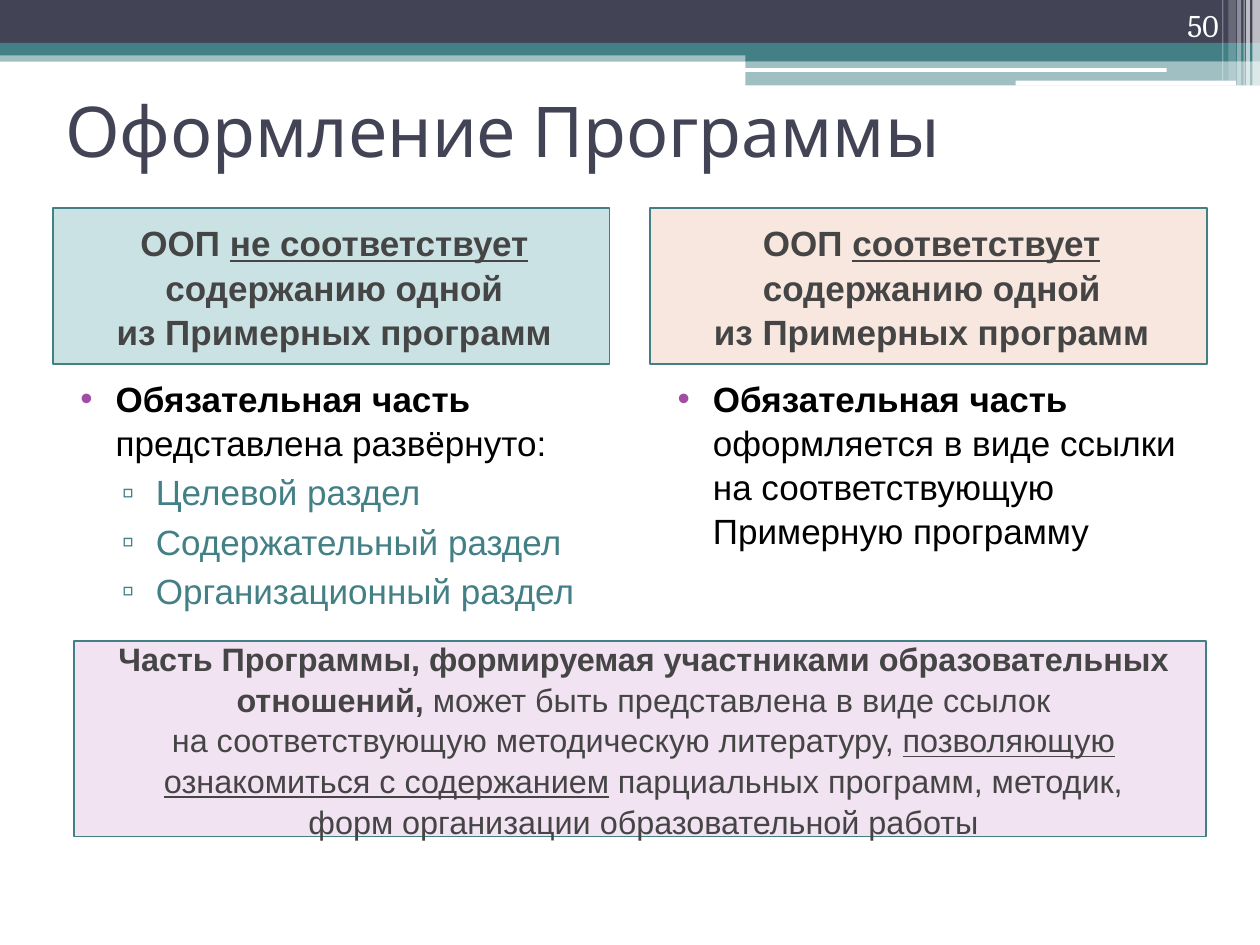
from typing import NamedTuple

from lxml import etree
from pptx import Presentation
from pptx.dml.color import RGBColor
from pptx.enum.shapes import MSO_SHAPE
from pptx.enum.text import MSO_ANCHOR, PP_ALIGN
from pptx.oxml.ns import qn
from pptx.util import Pt

RECT, ROUNDED = MSO_SHAPE.RECTANGLE, MSO_SHAPE.ROUNDED_RECTANGLE
LEFT, CENTER, RIGHT = PP_ALIGN.LEFT, PP_ALIGN.CENTER, PP_ALIGN.RIGHT
TOP, MIDDLE, BOTTOM = MSO_ANCHOR.TOP, MSO_ANCHOR.MIDDLE, MSO_ANCHOR.BOTTOM

TEAL, NAVY, WHITE, BLACK = "438086", "424456", "FFFFFF", "000000"
PURPLE, GRAY = "A04DA3", "454545"
LINE_SPACING = 1.05
COLUMN_WIDTH = 318.2
LEFT_COLUMN, RIGHT_COLUMN = 30.2, 371.5


class Box(NamedTuple):
    x: float
    y: float
    width: float
    height: float


class Strip(NamedTuple):
    box: Box
    color: str
    opacity: int = 100
    preset: int = RECT


class Span(NamedTuple):
    text: str
    bold: bool = False
    underline: bool = False


class Style(NamedTuple):
    size: float
    color: str
    font: str = "Arial"
    align: int = LEFT
    margin: float = 0
    indent: float = 0
    bullet: str = ""
    bullet_color: str = ""
    line_spacing: float = LINE_SPACING


class Paragraph(NamedTuple):
    spans: list[Span]
    style: Style


class Column(NamedTuple):
    x: float
    tint: str
    heading: list[Span]
    points: list[Paragraph]


ITEM = Style(20, BLACK, margin=28.8, indent=-20.2, bullet="•", bullet_color=PURPLE)
SUBITEM = Style(20, TEAL, margin=51.8, indent=-19.4, bullet="▫", bullet_color=TEAL)
HEADING = Style(20, GRAY, align=CENTER, margin=3.6)
SUMMARY = HEADING._replace(size=18.5)
TITLE = Style(40, NAVY, "Cabin", line_spacing=1)
NUMBER = Style(18, WHITE, "Cambria", RIGHT, line_spacing=1)

STRIPS = [
    Strip(Box(0, 28.8, 720, 6.5), TEAL, 50),
    Strip(Box(0, 0, 720, 24.5), NAVY),
    Strip(Box(0, 24.5, 720, 7.2), TEAL),
    Strip(Box(426, 28.1, 294, 7), TEAL),
    Strip(Box(426, 35, 294, 13.8), TEAL, 50),
    Strip(Box(425.5, 38.9, 241.2, 2.2), WHITE, preset=ROUNDED),
    Strip(Box(580.3, 46.1, 126, 2.9), WHITE, preset=ROUNDED),
    Strip(Box(715.7, 0, 4.3, 49), WHITE, 65),
    Strip(Box(712.1, 0, 2.2, 49), WHITE, 65),
    Strip(Box(710.6, 0, 0.7, 49), WHITE, 60),
    Strip(Box(707, 0, 2.2, 49), WHITE, 40),
    Strip(Box(702, 0, 4.3, 46.1), WHITE, 20),
    Strip(Box(698.4, 0, 0.7, 46.1), WHITE, 30),
]

COLUMNS = [
    Column(
        LEFT_COLUMN, "328E97",
        [Span("ООП ", True), Span("не соответствует ", True, True),
         Span("содержанию одной\nиз Примерных программ", True)],
        [Paragraph([Span("Обязательная часть ", True),
                    Span("представлена развёрнуто:")], ITEM)]
        + [Paragraph([Span(f"{section} раздел")], SUBITEM)
           for section in ("Целевой", "Содержательный", "Организационный")],
    ),
    Column(
        RIGHT_COLUMN, "E1A17C",
        [Span("ООП ", True), Span("соответствует\n", True, True),
         Span("содержанию одной\nиз Примерных программ", True)],
        [Paragraph([Span("Обязательная часть ", True),
                    Span("оформляется в виде ссылки на соответствующую "
                         "Примерную программу")], ITEM)],
    ),
]

SUMMARY_SPANS = [
    Span("Часть Программы, формируемая участниками образовательных отношений, ", True),
    Span("может быть представлена в виде ссылок\n"
         "на соответствующую методическую литературу, "),
    Span("позволяющую ознакомиться с содержанием", underline=True),
    Span(" парциальных программ, методик,\nформ организации образовательной работы"),
]


def rgb(value: str) -> RGBColor:
    return RGBColor.from_string(value)


def points(box: Box) -> list[Pt]:
    return [Pt(length) for length in box]


def add_panel(slide, strip: Strip, outline: str = ""):
    panel = slide.shapes.add_shape(strip.preset, *points(strip.box))
    panel.shadow.inherit = False
    panel.fill.solid()
    panel.fill.fore_color.rgb = rgb(strip.color)
    if strip.opacity < 100:
        color = panel.fill._xPr.find(f".//{qn('a:srgbClr')}")
        etree.SubElement(color, qn("a:alpha"), val=str(strip.opacity * 1000))
    if outline:
        panel.line.color.rgb = rgb(outline)
        panel.line.width = Pt(1)
    else:
        panel.line.fill.background()
    return panel


def format_paragraph(paragraph, style: Style) -> None:
    properties = paragraph._p.get_or_add_pPr()
    properties.set("marL", str(Pt(style.margin)))
    properties.set("indent", str(Pt(style.indent)))
    if style.bullet:
        color = etree.SubElement(properties, qn("a:buClr"))
        etree.SubElement(color, qn("a:srgbClr"), val=style.bullet_color)
        etree.SubElement(properties, qn("a:buFont"), typeface="Arial")
        etree.SubElement(properties, qn("a:buChar"), char=style.bullet)
    paragraph.alignment = style.align
    paragraph.line_spacing = style.line_spacing


def add_span(paragraph, span: Span, style: Style) -> None:
    for index, line in enumerate(span.text.split("\n")):
        if index:
            paragraph.add_line_break()
        if line:
            run = paragraph.add_run()
            run.text = line
            run.font.name = style.font
            run.font.size = Pt(style.size)
            run.font.color.rgb = rgb(style.color)
            run.font.bold = span.bold
            run.font.underline = span.underline


def write(shape, paragraphs: list[Paragraph], anchor: int) -> None:
    frame = shape.text_frame
    frame.word_wrap = True
    frame.vertical_anchor = anchor
    for index, content in enumerate(paragraphs):
        paragraph = frame.add_paragraph() if index else frame.paragraphs[0]
        format_paragraph(paragraph, content.style)
        if index:
            paragraph.space_before = Pt(3)
        for span in content.spans:
            add_span(paragraph, span, content.style)


def add_text(slide, box: Box, paragraphs: list[Paragraph], anchor: int) -> None:
    write(slide.shapes.add_textbox(*points(box)), paragraphs, anchor)


def add_callout(slide, box: Box, tint: str, spans: list[Span], style: Style) -> None:
    panel = add_panel(slide, Strip(box, tint, 25), TEAL)
    write(panel, [Paragraph(spans, style)], MIDDLE)


def main() -> None:
    deck = Presentation()
    deck.slide_width, deck.slide_height = Pt(720), Pt(540)
    slide = deck.slides.add_slide(deck.slide_layouts[6])
    for strip in STRIPS:
        add_panel(slide, strip)
    add_text(slide, Box(30.2, 31.7, 660.2, 84.2),
             [Paragraph([Span("Оформление Программы")], TITLE)], MIDDLE)
    for column in COLUMNS:
        add_text(slide, Box(column.x, 211, COLUMN_WIDTH, 150), column.points, TOP)
        add_callout(slide, Box(column.x, 118.8, COLUMN_WIDTH, 89.3),
                    column.tint, column.heading, HEADING)
    add_text(slide, Box(643.7, 0, 59.8, 28.8),
             [Paragraph([Span("50")], NUMBER)], BOTTOM)
    add_callout(slide, Box(42.5, 366.5, 646.6, 111.6), "C991CB", SUMMARY_SPANS, SUMMARY)
    deck.save("out.pptx")


if __name__ == "__main__":
    main()
